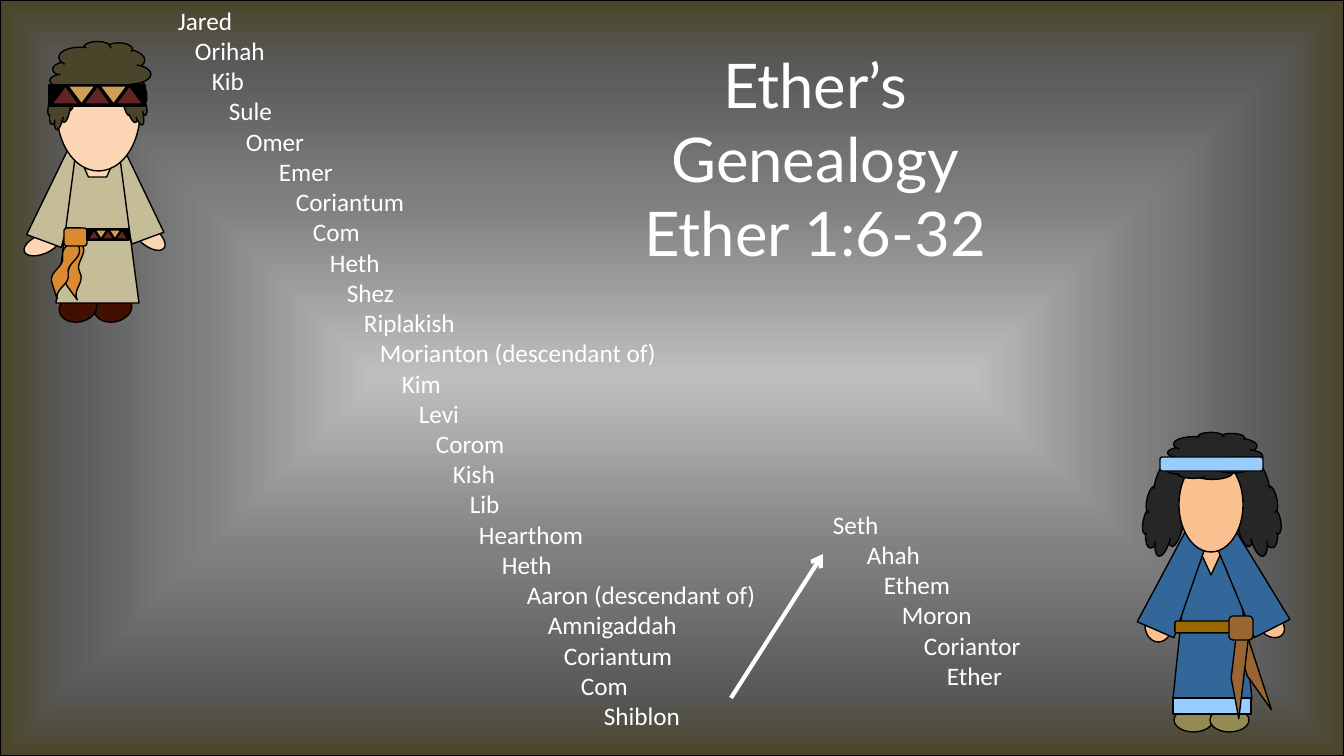
from lxml import etree
from pptx import Presentation
from pptx.dml.color import RGBColor
from pptx.enum.shapes import MSO_CONNECTOR, MSO_SHAPE
from pptx.enum.text import PP_ALIGN
from pptx.oxml.ns import qn
from pptx.util import Pt

SLIDE_WIDTH, SLIDE_HEIGHT = 1344, 756
EMU_PER_PX = 12192000 / SLIDE_WIDTH

CENTER, LEFT = PP_ALIGN.CENTER, PP_ALIGN.LEFT
STRAIGHT = MSO_CONNECTOR.STRAIGHT
RECTANGLE = MSO_SHAPE.RECTANGLE
ROUNDED = MSO_SHAPE.ROUNDED_RECTANGLE
OVAL = MSO_SHAPE.OVAL
CLOUD = MSO_SHAPE.CLOUD
TRAPEZOID = MSO_SHAPE.TRAPEZOID
TRIANGLE = MSO_SHAPE.ISOSCELES_TRIANGLE
WAVE = MSO_SHAPE.DOUBLE_WAVE
FUNNEL = MSO_SHAPE.FLOWCHART_MANUAL_OPERATION
EXTRACT = MSO_SHAPE.FLOWCHART_EXTRACT
STRIPE = MSO_SHAPE.DIAGONAL_STRIPE

WHITE = RGBColor(0xFF, 0xFF, 0xFF)
BLACK = RGBColor(0x00, 0x00, 0x00)
LIGHT_GREY = RGBColor(0xBF, 0xBF, 0xBF)
MID_GREY = RGBColor(0x80, 0x80, 0x80)
DARK_GREY = RGBColor(0x59, 0x59, 0x59)
OLIVE = RGBColor(0x4A, 0x45, 0x2A)
PALE_SKIN = RGBColor(0xFC, 0xD5, 0xB5)
LINEN = RGBColor(0xC4, 0xBD, 0x97)
MAROON = RGBColor(0x41, 0x10, 0x01)
ORANGE = RGBColor(0xD9, 0x8A, 0x33)
RED = RGBColor(0x63, 0x25, 0x23)
GOLD = RGBColor(0xCF, 0x9E, 0x55)
TAN_SKIN = RGBColor(0xFA, 0xC0, 0x90)
KHAKI = RGBColor(0x94, 0x8A, 0x54)
CHARCOAL = RGBColor(0x26, 0x26, 0x26)
BLUE = RGBColor(0x33, 0x66, 0x99)
SKY = RGBColor(0x99, 0xCC, 0xFF)
BRONZE = RGBColor(0x99, 0x66, 0x00)
BROWN = RGBColor(0x99, 0x66, 0x33)

BACKDROP_STOPS = [(0, LIGHT_GREY), (46, MID_GREY), (83, DARK_GREY), (100, OLIVE)]

# Each line: text, indent in px
TITLE = [("Ether’s Genealogy", 0), ("Ether 1:6-32", 0)]
JARED_TO_SHIBLON = [
    ("Jared", 0), ("Orihah", 17), ("Kib", 34), ("Sule", 51), ("Omer", 68),
    ("Emer", 101), ("Coriantum", 118), ("Com", 135), ("Heth", 152),
    ("Shez", 169), ("Riplakish", 186), ("Morianton (descendant of)", 202),
    ("Kim", 224), ("Levi", 241), ("Corom", 258), ("Kish", 275), ("Lib", 292),
    ("Hearthom", 301), ("Heth", 324), ("Aaron (descendant of)", 349),
    ("Amnigaddah", 370), ("Coriantum", 386), ("Com", 403), ("Shiblon", 426),
]
SETH_TO_ETHER = [
    ("Seth", 0), ("Ahah", 34), ("Ethem", 51), ("Moron", 69),
    ("Coriantor", 91), ("Ether", 114),
]


def zigzag(left, top, width, height, step):
    """Five triangles that alternate in colour and direction."""
    return [(TRIANGLE, (left + step * i, top, width, height),
             (RED, GOLD)[i % 2], 180 * (i % 2)) for i in range(5)]


# Each part, from back to front: kind, box in px, colour, rotation, options
MAN = [
    (OVAL, (130, 227, 38, 19), PALE_SKIN, 38),
    (OVAL, (23, 235, 38, 19), PALE_SKIN, 337.4),
    (TRAPEZOID, (42, 149, 37, 95), LINEN, 20.3),
    (TRAPEZOID, (115, 149, 34, 92), LINEN, 339.7),
    (OVAL, (94, 294, 38, 28), MAROON, 349.2),
    (OVAL, (59, 294, 38, 28), MAROON, 349.2),
    (TRAPEZOID, (56, 145, 83, 158), LINEN, 0),
    (TRAPEZOID, (74, 145, 47, 32), PALE_SKIN, 180, {"adjust": [0.45]}),
    (OVAL, (57, 54, 83, 117), PALE_SKIN, 0),
    (CLOUD, (50, 62, 26, 68), OLIVE, 11.2),
    (ROUNDED, (68, 229, 61, 11), ORANGE, 0),
    (WAVE, (40, 257, 69, 16), ORANGE, 275.3, {"adjust": [0.12, -0.1]}),
    (WAVE, (31, 257, 69, 16), ORANGE, 293.9, {"adjust": [0.12, -0.1]}),
    (ROUNDED, (64, 228, 23, 18), ORANGE, 0),
    (CLOUD, (120, 58, 26, 68), OLIVE, 344.9),
    (CLOUD, (68, 23, 64, 101), OLIVE, 270, {"flip": True}),
    (RECTANGLE, (49, 85, 96, 21), BLACK, 0),
    *zigzag(52, 86, 27, 18, 16),
    (RECTANGLE, (87, 229, 42, 11), BLACK, 0),
    *zigzag(88, 230, 12, 9, 7),
]
WOMAN = [
    (OVAL, (1261, 612, 21, 28), TAN_SKIN, 304),
    (OVAL, (1174, 708, 39, 24), KHAKI, 0),
    (OVAL, (1210, 708, 39, 24), KHAKI, 0),
    (CLOUD, (1227, 456, 51, 101), CHARCOAL, 347.3, {"flip": True}),
    (OVAL, (1145, 609, 27, 33), TAN_SKIN, 0),
    (FUNNEL, (1173, 547, 79, 152), BLUE, 180),
    (RECTANGLE, (1173, 698, 78, 16), SKY, 0),
    (EXTRACT, (1194, 538, 34, 37), TAN_SKIN, 180),
    (FUNNEL, (1156, 532, 40, 102), BLUE, 203.6),
    (FUNNEL, (1229, 532, 40, 102), BLUE, 153),
    (CLOUD, (1146, 456, 47, 101), CHARCOAL, 12.7),
    (OVAL, (1179, 457, 64, 95), TAN_SKIN, 0),
    (CLOUD, (1190, 407, 47, 98), CHARCOAL, 270, {"flip": True}),
    (ROUNDED, (1160, 457, 103, 14), SKY, 0),
    (ROUNDED, (1175, 621, 72, 12), BRONZE, 0),
    (STRIPE, (1245, 627, 26, 83), BROWN, 324.5),
    (STRIPE, (1231, 634, 26, 83), BROWN, 349.4),
    (ROUNDED, (1229, 616, 24, 24), BROWN, 0),
]


def px(*lengths):
    return [round(length * EMU_PER_PX) for length in lengths]


def add_part(shapes, kind, box, color, rotation=0, options=None):
    options = options or {}
    shape = shapes.add_shape(kind, *px(*box))
    shape.shadow.inherit = False
    shape.rotation = rotation
    shape.fill.solid()
    shape.fill.fore_color.rgb = color
    shape.line.color.rgb = BLACK
    shape.line.width = Pt(1)
    for index, value in enumerate(options.get("adjust", [])):
        shape.adjustments[index] = value
    if options.get("flip"):
        shape._element.spPr.find(qn("a:xfrm")).set("flipH", "1")
    return shape


def fill_from_center(shape, stops):
    """Give the shape a gradient that spreads from its centre to its edges."""
    properties = shape._element.spPr
    gradient = etree.Element(qn("a:gradFill"), rotWithShape="1")
    stop_list = etree.SubElement(gradient, qn("a:gsLst"))
    for percent, color in stops:
        stop = etree.SubElement(stop_list, qn("a:gs"), pos=str(percent * 1000))
        etree.SubElement(stop, qn("a:srgbClr"), val=str(color))
    spread = etree.SubElement(gradient, qn("a:path"), path="shape")
    etree.SubElement(spread, qn("a:fillToRect"),
                     {side: "50000" for side in "ltrb"})
    properties.replace(properties.find(qn("a:solidFill")), gradient)


def add_text(slide, box, lines, font, size, alignment=LEFT):
    frame = slide.shapes.add_textbox(*px(*box)).text_frame
    frame.word_wrap = True
    for index, (text, indent) in enumerate(lines):
        paragraph = frame.add_paragraph() if index else frame.paragraphs[0]
        paragraph.alignment = alignment
        paragraph._p.get_or_add_pPr().set("marL", str(px(indent)[0]))
        run = paragraph.add_run()
        run.text = text
        run.font.name = font
        run.font.size = Pt(size)
        run.font.color.rgb = WHITE


def add_arrow(slide, start, end):
    arrow = slide.shapes.add_connector(STRAIGHT, *px(*start, *end))
    arrow.line.color.rgb = WHITE
    arrow.line.width = Pt(3)
    etree.SubElement(arrow.line._get_or_add_ln(), qn("a:tailEnd"), type="arrow")
    etree.SubElement(arrow._element.spPr, qn("a:effectLst"))


def main():
    presentation = Presentation()
    presentation.slide_width, presentation.slide_height = px(SLIDE_WIDTH, SLIDE_HEIGHT)
    slide = presentation.slides.add_slide(presentation.slide_layouts[6])

    backdrop = add_part(slide.shapes, RECTANGLE, (0, 0, SLIDE_WIDTH, SLIDE_HEIGHT), OLIVE)
    fill_from_center(backdrop, BACKDROP_STOPS)

    add_text(slide, (168, 0, 706, 756), JARED_TO_SHIBLON, "Calibri", 18)
    add_text(slide, (823, 504, 277, 194), SETH_TO_ETHER, "Calibri", 18)
    add_text(slide, (597, 42, 437, 159), TITLE, "Lato", 44, CENTER)
    add_arrow(slide, (731, 698), (823, 554))

    for figure in (MAN, WOMAN):
        group = slide.shapes.add_group_shape()
        for part in figure:
            add_part(group.shapes, *part)

    presentation.save("out.pptx")


if __name__ == "__main__":
    main()
